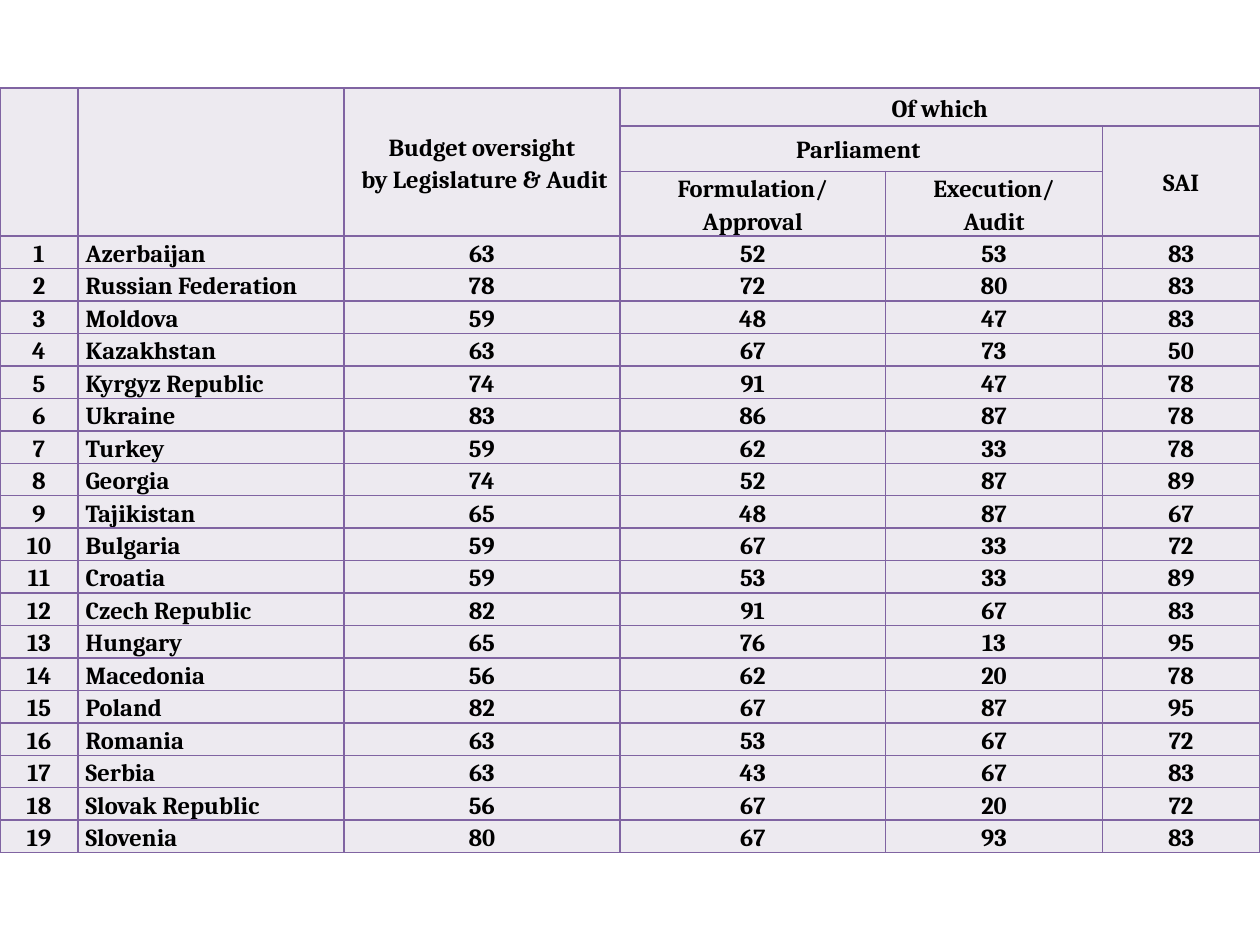
from dataclasses import dataclass
from lxml.etree import SubElement
from pptx import Presentation
from pptx.dml.color import RGBColor
from pptx.enum.text import MSO_ANCHOR, PP_ALIGN
from pptx.oxml.ns import qn
from pptx.util import Inches, Pt


@dataclass(frozen=True)
class Theme:
    ink: str = "000000"
    fill: str = "EDEAF0"
    edge: str = "8064A2"
    face: str = "Cambria"
    size: int = 14
    rule: int = 1


THEME = Theme()
WIDTHS = (0.62, 2.11, 2.19, 2.11, 1.72, 1.25)
HEADS = (0.3, 0.36, 0.51)
STEP = 0.25
SPANS = (
    (0, 0, 2, 0),
    (0, 1, 2, 1),
    (0, 2, 2, 2),
    (0, 3, 0, 5),
    (1, 3, 1, 4),
    (1, 5, 2, 5),
)
TITLES = {
    (0, 2): "Budget oversight\n by Legislature & Audit",
    (0, 3): "Of which",
    (1, 3): "Parliament ",
    (1, 5): "SAI",
    (2, 3): "Formulation/\nApproval",
    (2, 4): "Execution/\nAudit",
}
SCORES = (
    ("Azerbaijan", 63, 52, 53, 83),
    ("Russian Federation", 78, 72, 80, 83),
    ("Moldova", 59, 48, 47, 83),
    ("Kazakhstan", 63, 67, 73, 50),
    ("Kyrgyz Republic", 74, 91, 47, 78),
    ("Ukraine", 83, 86, 87, 78),
    ("Turkey", 59, 62, 33, 78),
    ("Georgia", 74, 52, 87, 89),
    ("Tajikistan", 65, 48, 87, 67),
    ("Bulgaria", 59, 67, 33, 72),
    ("Croatia", 59, 53, 33, 89),
    ("Czech Republic", 82, 91, 67, 83),
    ("Hungary", 65, 76, 13, 95),
    ("Macedonia", 56, 62, 20, 78),
    ("Poland", 82, 67, 87, 95),
    ("Romania", 63, 53, 67, 72),
    ("Serbia", 63, 43, 67, 83),
    ("Slovak Republic", 56, 67, 20, 72),
    ("Slovenia", 80, 67, 93, 83),
)


def apply(target, format):
    for name, value in format.items():
        setattr(target, name, value)


def frame_cell(cell):
    props = cell._tc.get_or_add_tcPr()
    for side in ("lnL", "lnR", "lnT", "lnB"):
        line = SubElement(props, qn(f"a:{side}"), w=str(Pt(THEME.rule)))
        paint = SubElement(line, qn("a:solidFill"))
        SubElement(paint, qn("a:srgbClr"), val=THEME.edge)
    cell.fill.solid()
    cell.fill.fore_color.rgb = RGBColor.from_string(THEME.fill)


def style_cell(cell, text, left):
    frame_cell(cell)
    apply(cell, {
        "margin_left": Inches(0.06),
        "margin_right": Inches(0.06),
        "margin_top": 0,
        "margin_bottom": 0,
        "vertical_anchor": MSO_ANCHOR.BOTTOM if left else MSO_ANCHOR.MIDDLE,
    })
    if text:
        cell.text = text
    for para in cell.text_frame.paragraphs:
        apply(para, {
            "alignment": PP_ALIGN.LEFT if left else PP_ALIGN.CENTER,
            "line_spacing": 1.15,
        })
        for run in para.runs:
            apply(run.font, {"name": THEME.face, "size": Pt(THEME.size), "bold": True})
            run.font.color.rgb = RGBColor.from_string(THEME.ink)
        if not para.runs:
            SubElement(para._p, qn("a:endParaRPr"), sz=str(THEME.size * 100))


def score_table(slide, x, y, width):
    heights = HEADS + (STEP,) * len(SCORES)
    table = slide.shapes.add_table(
        len(heights), len(WIDTHS), Inches(x), Inches(y),
        Inches(width), Inches(sum(heights)),
    ).table
    apply(table, {"first_row": False, "horz_banding": False})
    for column, part in zip(table.columns, WIDTHS):
        column.width = Inches(width * part / sum(WIDTHS))
    for row, height in zip(table.rows, heights):
        row.height = Inches(height)
    texts = dict(TITLES)
    for rank, scores in enumerate(SCORES, 1):
        for col, value in enumerate((rank, *scores)):
            texts[len(HEADS) + rank - 1, col] = str(value)
    for row in range(len(heights)):
        for col in range(len(WIDTHS)):
            left = col == 1 and row >= len(HEADS)
            style_cell(table.cell(row, col), texts.get((row, col)), left)
    for top, start, low, end in SPANS:
        table.cell(top, start).merge(table.cell(low, end))


def main():
    deck = Presentation()
    apply(deck, {"slide_width": Inches(10), "slide_height": Inches(7.5)})
    slide = deck.slides.add_slide(deck.slide_layouts[6])
    score_table(slide, 0, 0.7, 10)
    deck.save("out.pptx")


if __name__ == "__main__":
    main()
